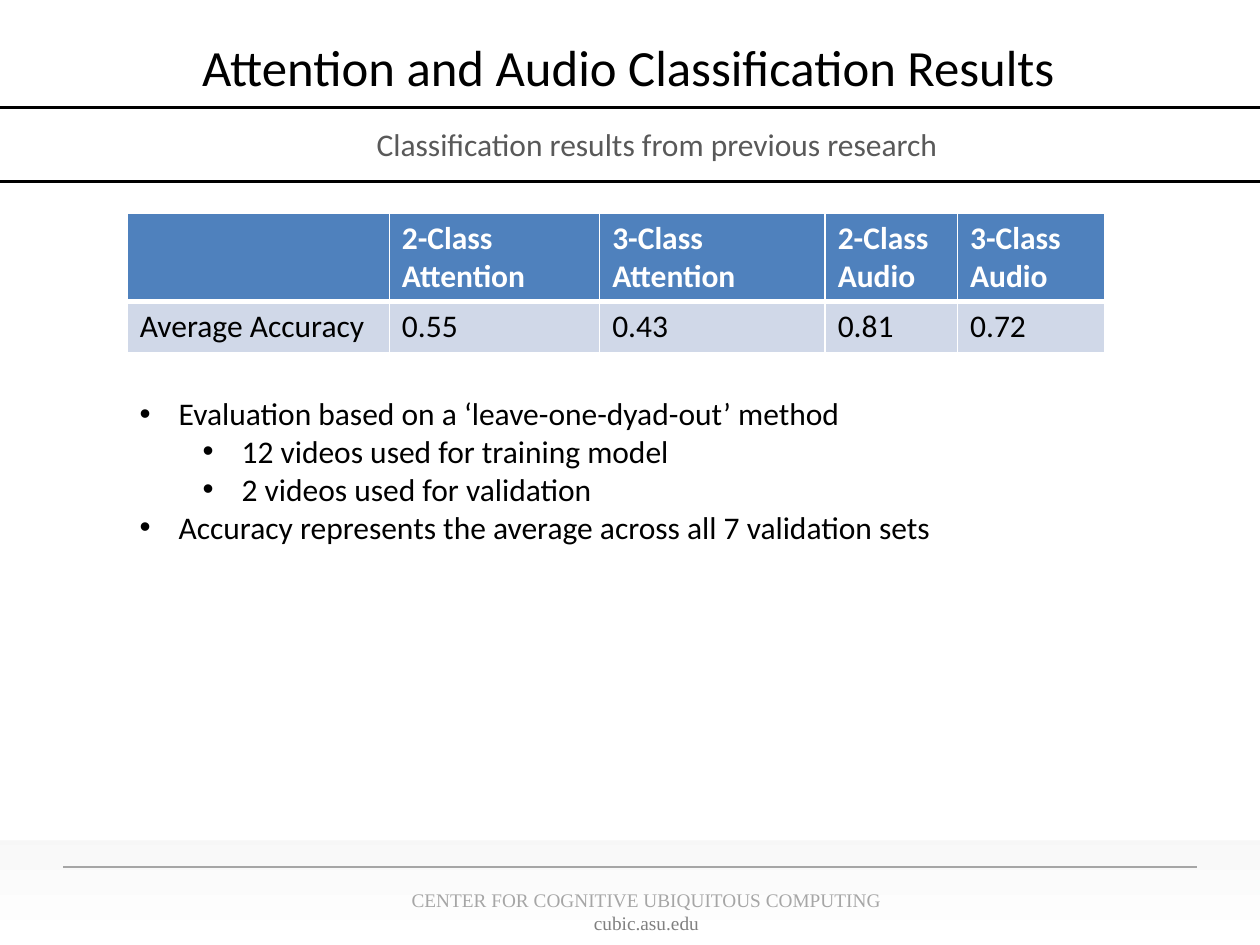
from lxml.etree import SubElement as Sub
from pptx import Presentation
from pptx.dml.color import RGBColor
from pptx.enum.shapes import MSO_CONNECTOR as Conn, MSO_SHAPE as Shape
from pptx.enum.text import PP_ALIGN as Align
from pptx.oxml import parse_xml
from pptx.oxml.ns import nsdecls, qn
from pptx.util import Inches, Pt


def rgb(code):
    return RGBColor.from_string(code)


def write(para, text, size=18, font="Calibri", color="000000", bold=False, align=None):
    para.alignment = align
    run = para.add_run()
    run.text = text
    run.font.size, run.font.name, run.font.bold = Pt(size), font, bold
    run.font.color.rgb = rgb(color)


class Deck:
    """Hold the style and the current slide, and draw each kind of element."""

    head, body, edge = "4F81BD", "D0D8E8", "FFFFFF"

    def __init__(self):
        self.prs = Presentation()
        self.prs.slide_width, self.prs.slide_height = Inches(10), Inches(7.5)
        self.slide = self.prs.slides.add_slide(self.prs.slide_layouts[6])

    def panel(self, *box, fill=None, stops=()):
        panel = self.slide.shapes.add_shape(Shape.RECTANGLE, *map(Inches, box))
        panel.shadow.inherit = False
        panel.line.fill.background()
        if fill:
            panel.fill.solid()
            panel.fill.fore_color.rgb = rgb(fill)
            return
        marks = "".join(
            f'<a:gs pos="{pos * 1000}"><a:srgbClr val="{code}"/></a:gs>'
            for pos, code in stops)
        geom = panel._element.spPr.find(qn("a:prstGeom"))
        geom.addnext(parse_xml(
            f'<a:gradFill {nsdecls("a")}><a:gsLst>{marks}</a:gsLst>'
            '<a:lin ang="5400000" scaled="0"/></a:gradFill>'))

    def rule(self, left, right, y, color="000000", width=1.75):
        line = self.slide.shapes.add_connector(
            Conn.STRAIGHT, *map(Inches, (left, y, right, y)))
        line.line.color.rgb, line.line.width = rgb(color), Pt(width)
        Sub(line._element.spPr, qn("a:effectLst"))

    def text(self, *box, lines, top=0.05, indent=0, **style):
        frame = self.slide.shapes.add_textbox(*map(Inches, box)).text_frame
        frame.word_wrap, frame.margin_top = True, Inches(top)
        for i, (text, extra) in enumerate(lines):
            para = frame.add_paragraph() if i else frame.paragraphs[0]
            if indent:
                para._p.get_or_add_pPr().set("marL", str(Inches(indent)))
            write(para, text, **{**style, **extra})

    def bullets(self, *box, items):
        frame = self.slide.shapes.add_textbox(*map(Inches, box)).text_frame
        frame.word_wrap = True
        for i, (level, text) in enumerate(items):
            para = frame.add_paragraph() if i else frame.paragraphs[0]
            para.level = level
            props = para._p.get_or_add_pPr()
            props.set("marL", str(Inches(0.31 + level / 2)))
            props.set("indent", str(Inches(-0.31)))
            Sub(props, qn("a:buFont"), typeface="Arial")
            Sub(props, qn("a:buChar"), char="•")
            write(para, text)

    def border(self, cell, sides):
        props = cell._tc.get_or_add_tcPr()
        for i, (side, width) in enumerate(sides.items()):
            props.insert(i, parse_xml(
                f'<a:ln{side} {nsdecls("a")} w="{Pt(width)}"><a:solidFill>'
                f'<a:srgbClr val="{self.edge}"/></a:solidFill></a:ln{side}>'))

    def table(self, *box, rows, widths, heights):
        grid = self.slide.shapes.add_table(
            len(rows), len(widths), *map(Inches, box)).table
        for col, width in zip(grid.columns, widths):
            col.width = Inches(width)
        for r, (row, height) in enumerate(zip(rows, heights)):
            grid.rows[r].height = Inches(height)
            for c, text in enumerate(row):
                cell = grid.cell(r, c)
                cell.fill.solid()
                cell.fill.fore_color.rgb = rgb(self.body if r else self.head)
                self.border(cell, dict(L=1, R=1, T=1 if r == 0 else 3,
                                       B=3 if r == 0 else 1))
                if text:
                    write(cell.text_frame.paragraphs[0], text, bold=r == 0,
                          color="000000" if r else "FFFFFF")


def main():
    deck = Deck()
    deck.panel(0, 0, 10, 7.5,
               stops=[(0, "BFBFBF"), (50, "D9D9D9"), (100, "FFFFFF")])
    deck.text(2.17, 7, 5.92, 0.47, size=11, font="Times New Roman",
              align=Align.CENTER, lines=[
                  ("CENTER FOR COGNITIVE UBIQUITOUS COMPUTING", {"color": "A6A6A6"}),
                  ("cubic.asu.edu", {"color": "808080"})])
    deck.rule(0.5, 9.5, 6.88, color="A6A6A6", width=0.75)
    deck.panel(0, 0, 10, 6.67, fill="FFFFFF")
    deck.text(0.49, 0.17, 9, 0.95, top=0.11, size=29, align=Align.CENTER,
              lines=[("Attention and Audio Classification Results", {})])
    for y in (0.85, 1.44):
        deck.rule(0, 10, y)
    deck.text(0.1, 0.94, 9.98, 0.4, indent=0.25, color="595959", align=Align.CENTER,
              lines=[("Classification results from previous research", {})])
    deck.table(1.01, 1.69, 7.74, 1.11,
               widths=[2.08, 1.67, 1.79, 1.05, 1.17], heights=[0.7, 0.41],
               rows=[["", "2-Class Attention", "3-Class Attention",
                      "2-Class Audio", "3-Class Audio"],
                     ["Average Accuracy", "0.55", "0.43", "0.81", "0.72"]])
    deck.bullets(1.01, 3.08, 7.74, 1.62, items=[
        (0, "Evaluation based on a ‘leave-one-dyad-out’ method"),
        (1, "12 videos used for training model"),
        (1, "2 videos used for validation"),
        (0, "Accuracy represents the average across all 7 validation sets")])
    deck.prs.save("out.pptx")


if __name__ == "__main__":
    main()
